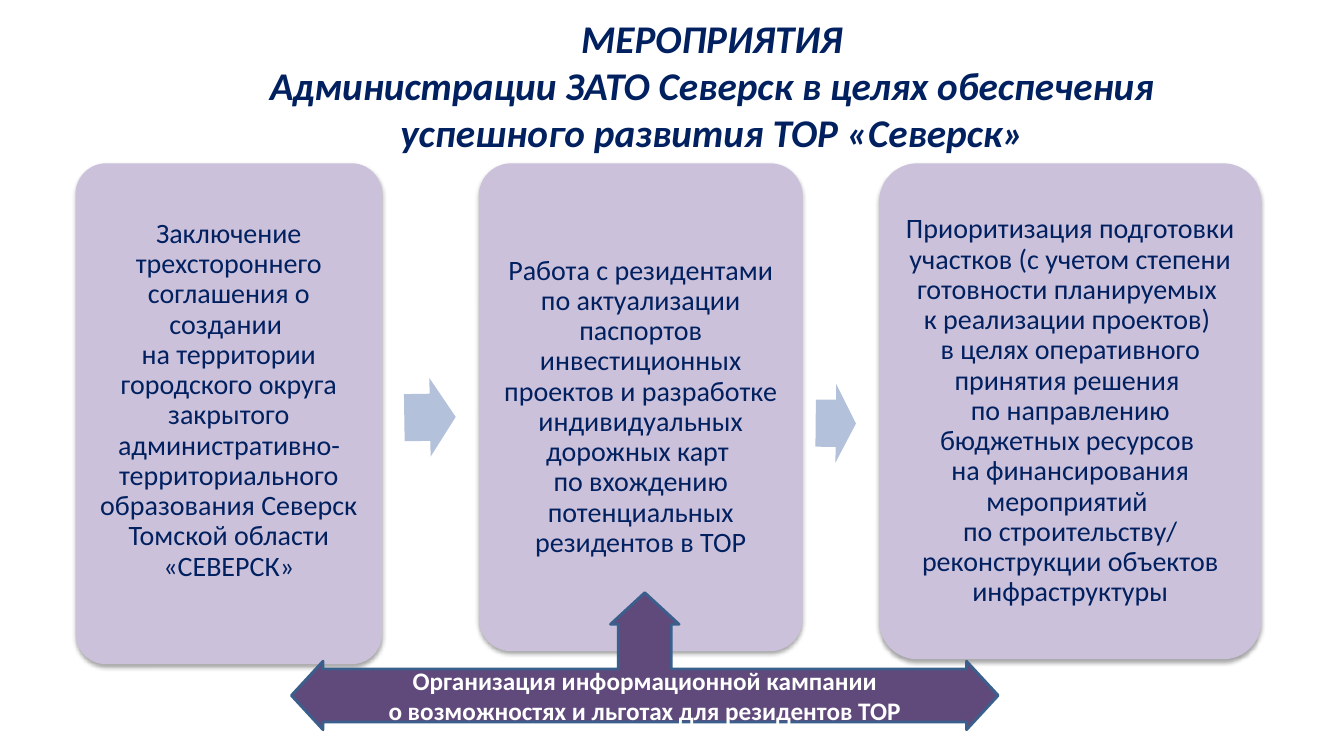
import pptx
import pptx.util
import pptx.dml.color
import pptx.enum.shapes
import pptx.enum.text
import pptx.oxml
import pptx.oxml.ns

Inches, Pt = pptx.util.Inches, pptx.util.Pt
KIND = pptx.enum.shapes.MSO_SHAPE
TEXT = pptx.enum.text

# Content
TITLE = ["МЕРОПРИЯТИЯ",
         "Администрации ЗАТО Северск в целях обеспечения "
         "успешного развития ТОР «Северск»"]
# left, width, height, inset, bottom inset, text
CARDS = [
    (0.75, 3.04, 4.97, 0.07, 0.33,
     "Заключение трехстороннего соглашения о создании \n"
     "на территории городского округа закрытого "
     "административно-территориального образования Северск "
     "Томской области «СЕВЕРСК»"),
    (4.75, 3.21, 4.84, 0.08, 0.08,
     "Работа с резидентами по актуализации паспортов инвестиционных "
     "проектов и разработке индивидуальных дорожных карт \n"
     "по вхождению потенциальных резидентов в ТОР"),
    (8.72, 3.79, 4.92, 0.08, 0.08,
     "Приоритизация подготовки участков (с учетом степени "
     "готовности планируемых \nк реализации проектов) \n"
     "в целях оперативного принятия решения \n"
     "по направлению бюджетных ресурсов \n"
     "на финансирования мероприятий \n"
     "по строительству/ реконструкции объектов инфраструктуры"),
]
# left, top, width, height, rotation
ARROWS = [(4.01, 3.75, 0.51, 0.78, 359.1), (8.09, 3.81, 0.4, 0.78, 0.6)]
BANNER = ("Организация информационной кампании\n"
          "о возможностях и льготах для резидентов ТОР")

CARD_TOP = 1.62
NAVY, LILAC, PALE, PLUM = "002060", "CCC1DA", "B3C1DB", "604A7B"
EDGE, WHITE = "3A5F8C", "FFFFFF"
HEAD = {"size": Pt(28), "bold": True, "italic": True}
BODY = {"size": Pt(20), "bold": False}
NOTE = {"size": Pt(18), "bold": True}
SHADOW = (
    '<a:effectLst %s><a:outerShdw blurRad="39370" dist="22860" dir="5400000" '
    'rotWithShape="0"><a:srgbClr val="000000"><a:alpha val="35000"/>'
    '</a:srgbClr></a:outerShdw></a:effectLst>' % pptx.oxml.ns.nsdecls("a"))


def rgb(code):
    return pptx.dml.color.RGBColor.from_string(code)


def write(shape, lines, font, color, space=1.0):
    frame = shape.text_frame
    frame.word_wrap = True
    frame.auto_size = TEXT.MSO_AUTO_SIZE.NONE
    frame.vertical_anchor = TEXT.MSO_ANCHOR.MIDDLE
    for i, line in enumerate(lines):
        para = frame.add_paragraph() if i else frame.paragraphs[0]
        para.text = line
        para.alignment = TEXT.PP_ALIGN.CENTER
        para.line_spacing = space
        para.space_before = Pt(0)
        for run in para.runs:
            for key, value in {"name": "Calibri", **font}.items():
                setattr(run.font, key, value)
            run.font.color.rgb = rgb(color)


def draw(kind, box, fill, adjust):
    shape = slide.shapes.add_shape(kind, *map(Inches, box))
    shape.shadow.inherit = False
    shape.fill.solid()
    shape.fill.fore_color.rgb = rgb(fill)
    shape.line.fill.background()
    for i, value in enumerate(adjust):
        shape.adjustments[i] = value
    return shape


deck = pptx.Presentation()
deck.slide_width, deck.slide_height = Inches(13.33), Inches(7.5)
slide = deck.slides.add_slide(deck.slide_layouts[5])

# Title
title = slide.shapes.title
title.left, title.top = Inches(2.1), Inches(0.29)
title.width, title.height = Inches(9.92), Inches(1.1)
write(title, TITLE, HEAD, NAVY)

# Cards
for left, width, height, inset, bottom, text in CARDS:
    card = draw(KIND.ROUNDED_RECTANGLE, (left, CARD_TOP, width, height),
                LILAC, [0.1])
    props = card._element.spPr
    props.replace(props.find(pptx.oxml.ns.qn("a:effectLst")),
                  pptx.oxml.parse_xml(SHADOW))
    for side in ("left", "top", "right"):
        setattr(card.text_frame, "margin_" + side, Inches(inset))
    card.text_frame.margin_bottom = Inches(bottom)
    write(card, [text], BODY, NAVY, 0.9)

# Arrows between cards
for *box, turn in ARROWS:
    draw(KIND.RIGHT_ARROW, box, PALE, [0.6, 0.5]).rotation = turn

# Campaign banner
banner = draw(KIND.LEFT_RIGHT_UP_ARROW, (2.89, 5.88, 7.01, 1.36), PLUM,
              [0.387, 0.25, 0.231])
banner.line.color.rgb = rgb(EDGE)
banner.line.width = Pt(2)
write(banner, [BANNER], NOTE, WHITE)

deck.save("out.pptx")
